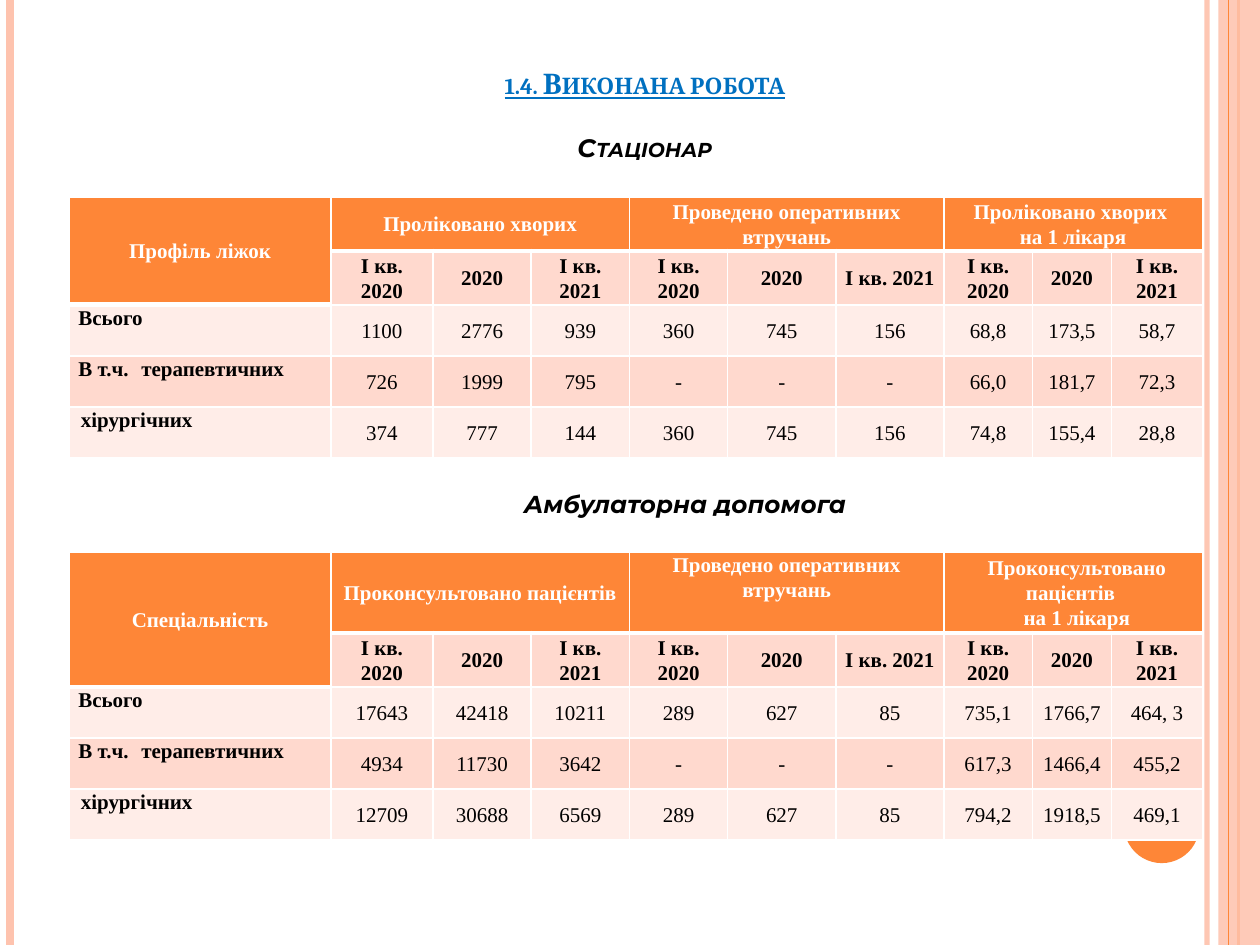
from lxml.etree import SubElement
from pptx import Presentation
from pptx.dml.color import RGBColor
from pptx.enum.shapes import MSO_CONNECTOR, MSO_SHAPE
from pptx.enum.text import MSO_ANCHOR, MSO_AUTO_SIZE, PP_ALIGN
from pptx.oxml.ns import qn
from pptx.util import Cm, Pt

WHITE = RGBColor(0xFF, 0xFF, 0xFF)
BLACK = RGBColor(0x00, 0x00, 0x00)
BLUE = RGBColor(0x00, 0x70, 0xC0)
ORANGE = RGBColor(0xFE, 0x86, 0x37)
PEACH = RGBColor(0xFE, 0xC3, 0xAE)
BAND_DARK = RGBColor(0xFF, 0xD9, 0xCE)
BAND_LIGHT = RGBColor(0xFF, 0xED, 0xE8)

SERIF = "Times New Roman"
TABLE_LEFT = 1.4
COLUMN_WIDTHS = [5.27, 2.06, 1.98, 1.98, 1.98, 2.18, 2.18, 1.78, 1.6, 1.83]
PERIODS = ["І кв. 2020", "2020", "І кв. 2021"]
LABELS = ["Всього", "В т.ч.\tтерапевтичних", "хірургічних"]
MIDDLE, TOP = MSO_ANCHOR.MIDDLE, MSO_ANCHOR.TOP

# Headings: text, vertical anchor, first-line indent in cm
INPATIENT_HEADINGS = [
    ("Профіль ліжок", MIDDLE, 0),
    ("Проліковано хворих", MIDDLE, 0),
    ("Проведено оперативних втручань", MIDDLE, 0),
    ("Проліковано хворих \nна 1 лікаря", MIDDLE, 0),
]
INPATIENT_VALUES = [
    ["1100", "2776", "939", "360", "745", "156", "68,8", "173,5", "58,7"],
    ["726", "1999", "795", "-", "-", "-", "66,0", "181,7", "72,3"],
    ["374", "777", "144", "360", "745", "156", "74,8", "155,4", "28,8"],
]
OUTPATIENT_HEADINGS = [
    ("Спеціальність", MIDDLE, -0.1),
    ("Проконсультовано пацієнтів", MIDDLE, 0),
    ("Проведено оперативних втручань", TOP, 0),
    ("Проконсультовано пацієнтів \nна 1 лікаря", MIDDLE, 0.15),
]
OUTPATIENT_VALUES = [
    ["17643", "42418", "10211", "289", "627", "85", "735,1", "1766,7", "464, 3"],
    ["4934", "11730", "3642", "-", "-", "-", "617,3", "1466,4", "455,2"],
    ["12709", "30688", "6569", "289", "627", "85", "794,2", "1918,5", "469,1"],
]


def set_alpha(properties, percent):
    color = next(properties.iter(qn("a:srgbClr")))
    SubElement(color, qn("a:alpha"), val=str(percent * 1000))


def add_rule(page, x, color, width, alpha=100):
    """Vertical line over the full height of the page."""
    rule = page.shapes.add_connector(
        MSO_CONNECTOR.STRAIGHT, Cm(x), Cm(0), Cm(x), Cm(19.05))
    rule.line.color.rgb = color
    rule.line.width = Pt(width)
    properties = rule._element.spPr
    if alpha < 100:
        set_alpha(properties, alpha)
    SubElement(properties, qn("a:effectLst"))


def add_block(page, kind, left, top, width, height, color, alpha=100):
    block = page.shapes.add_shape(kind, Cm(left), Cm(top), Cm(width), Cm(height))
    block.shadow.inherit = False
    block.fill.solid()
    block.fill.fore_color.rgb = color
    block.line.fill.background()
    if alpha < 100:
        set_alpha(block._element.spPr, alpha)


def add_span(para, text, size, font, color, bold=True, italic=False):
    span = para.add_run()
    span.text = text
    span.font.size = Pt(size)
    span.font.name = font
    span.font.color.rgb = color
    span.font.bold = bold
    span.font.italic = italic
    return span


def add_decoration(page):
    add_rule(page, 24.33, PEACH, 3, alpha=93)
    add_rule(page, 0.2, PEACH, 4.5)
    add_rule(page, 24.97, ORANGE, 1.5)
    add_block(page, MSO_SHAPE.RECTANGLE, 24.56, 0, 0.84, 19.05, PEACH, alpha=87)
    add_rule(page, 24.77, ORANGE, 0.75)
    add_block(page, MSO_SHAPE.OVAL, 22.66, 15.88, 1.52, 1.52, ORANGE)


def fill_title(page):
    title = page.shapes.title
    title.left, title.top, title.width, title.height = (
        Cm(1.57), Cm(1.57), Cm(22.86), Cm(2.39))
    frame = title.text_frame
    frame.auto_size = MSO_AUTO_SIZE.NONE
    frame.vertical_anchor = MSO_ANCHOR.BOTTOM
    frame.margin_top, frame.margin_bottom = Cm(0), Cm(0.69)

    heading, subheading = frame.paragraphs[0], frame.add_paragraph()
    subheading.space_before = Pt(18)
    heading_span = add_span(heading, "1.4. Виконана робота", 16.2, "Cambria", BLUE)
    heading_span.font.underline = True
    subheading_span = add_span(
        subheading, "Стаціонар", 14.4, "Montserrat", BLACK, italic=True)
    for para, span in [(heading, heading_span), (subheading, subheading_span)]:
        para.alignment = PP_ALIGN.CENTER
        span._r.get_or_add_rPr().set("cap", "small")


def add_subtitle(page, text):
    box = page.shapes.add_textbox(Cm(10.31), Cm(9.73), Cm(7.11), Cm(0.86))
    frame = box.text_frame
    frame.word_wrap = False
    frame.auto_size = MSO_AUTO_SIZE.SHAPE_TO_FIT_TEXT
    add_span(frame.paragraphs[0], text, 14, "Montserrat", BLACK, italic=True)


def style_cell(cell, fill, top=1, bottom=1):
    """White borders, then the fill, and tight margins."""
    properties = cell._tc.get_or_add_tcPr()
    for side, width in [("L", 1), ("R", 1), ("T", top), ("B", bottom)]:
        border = SubElement(properties, qn(f"a:ln{side}"), w=str(Pt(width)))
        SubElement(SubElement(border, qn("a:solidFill")),
                   qn("a:srgbClr"), val=str(WHITE))
    cell.fill.solid()
    cell.fill.fore_color.rgb = fill
    cell.margin_left = cell.margin_right = Cm(0.18)
    cell.margin_top = cell.margin_bottom = Cm(0)


def write_cell(cell, text, color=BLACK, bold=True, anchor=MIDDLE,
               align=PP_ALIGN.CENTER, indent=0):
    cell.vertical_anchor = anchor
    frame = cell.text_frame
    for number, line in enumerate(text.split("\n")):
        para = frame.add_paragraph() if number else frame.paragraphs[0]
        para.alignment = align
        para.line_spacing = 1.07
        properties = para._p.get_or_add_pPr()
        properties.set("indent", str(Cm(indent)))
        if "\t" in line:
            stops = SubElement(properties, qn("a:tabLst"))
            SubElement(stops, qn("a:tab"), pos=str(Cm(1.45)), algn="l")
        add_span(para, line, 12, SERIF, color, bold)


def add_work_table(page, top, row_heights, headings, values):
    frame = page.shapes.add_table(
        len(row_heights), len(COLUMN_WIDTHS), Cm(TABLE_LEFT), Cm(top),
        Cm(sum(COLUMN_WIDTHS)), Cm(sum(row_heights)))
    table = frame.table
    for column, width in zip(table.columns, COLUMN_WIDTHS):
        column.width = Cm(width)
    for row, height in zip(table.rows, row_heights):
        row.height = Cm(height)

    # Fills and borders; a thick line runs under the orange header
    for row in range(len(row_heights)):
        for column in range(len(COLUMN_WIDTHS)):
            last_header = 1 if column == 0 else 0
            band = BAND_DARK if row % 2 else BAND_LIGHT
            style_cell(table.cell(row, column),
                       ORANGE if row <= last_header else band,
                       top=3 if row == last_header + 1 else 1,
                       bottom=3 if row == last_header else 1)

    # Header: one tall cell, then three groups of three periods
    table.cell(0, 0).merge(table.cell(1, 0))
    for group, (text, anchor, indent) in enumerate(headings):
        first = max(0, 3 * group - 2)
        if group:
            table.cell(0, first).merge(table.cell(0, first + 2))
            for offset, period in enumerate(PERIODS):
                write_cell(table.cell(1, first + offset), period)
        write_cell(table.cell(0, first), text, WHITE, anchor=anchor, indent=indent)

    # Body
    for row, (label, numbers) in enumerate(zip(LABELS, values), start=2):
        write_cell(table.cell(row, 0), label, anchor=TOP, align=PP_ALIGN.LEFT,
                   indent=0.05 if label == LABELS[-1] else 0)
        for column, number in enumerate(numbers, start=1):
            write_cell(table.cell(row, column), number, bold=False)


def main():
    deck = Presentation()
    deck.slide_width, deck.slide_height = Cm(25.4), Cm(19.05)
    page = deck.slides.add_slide(deck.slide_layouts[5])
    add_decoration(page)
    fill_title(page)
    add_subtitle(page, "Амбулаторна допомога")
    body_heights = [1.08] + [1.03] * 3
    add_work_table(page, 3.97, [1.06] + body_heights,
                   INPATIENT_HEADINGS, INPATIENT_VALUES)
    add_work_table(page, 11.13, [1.61] + body_heights,
                   OUTPATIENT_HEADINGS, OUTPATIENT_VALUES)
    deck.save("out.pptx")


if __name__ == "__main__":
    main()
